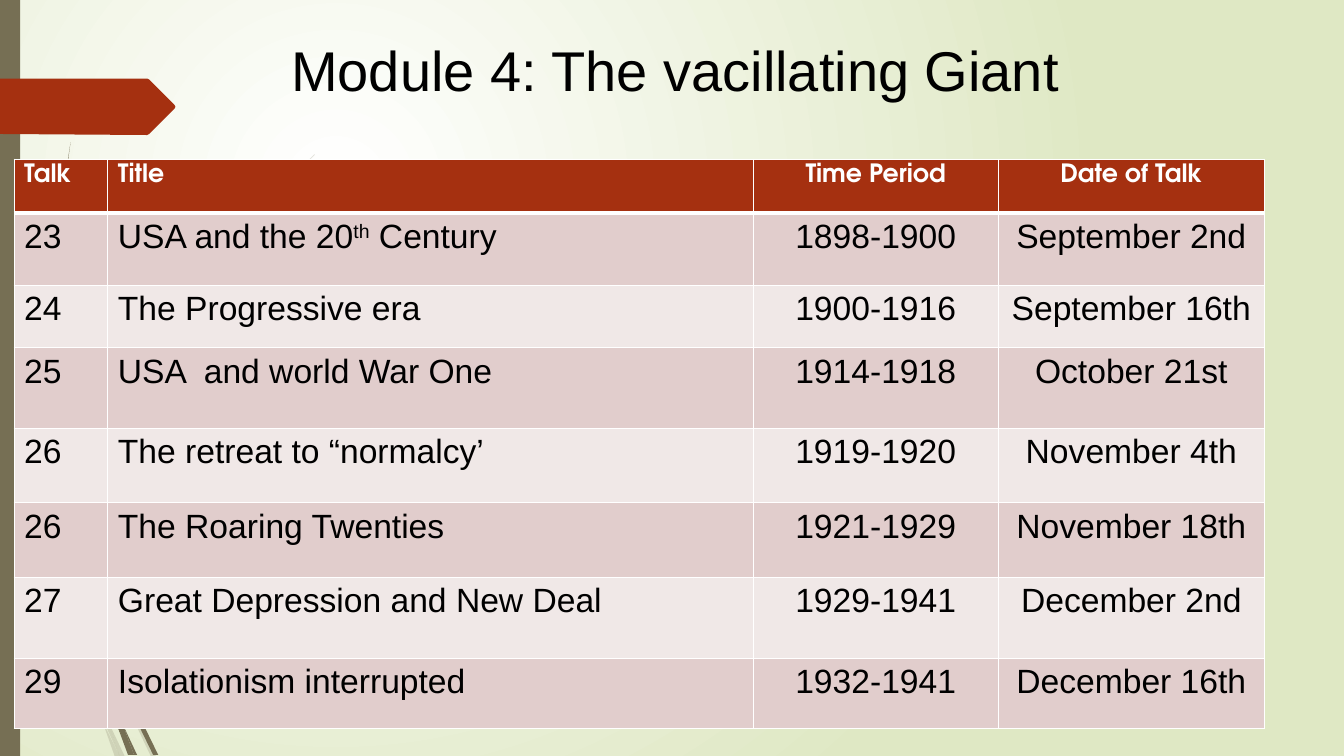
from dataclasses import dataclass

from lxml.etree import SubElement
from pptx import Presentation
from pptx.dml.color import RGBColor
from pptx.enum.shapes import MSO_SHAPE
from pptx.enum.text import PP_ALIGN
from pptx.oxml.ns import qn
from pptx.util import Inches, Pt

WHITE = RGBColor(0xFF, 0xFF, 0xFF)
BLACK = RGBColor(0x00, 0x00, 0x00)
PALE_GREEN = RGBColor(0xDF, 0xE8, 0xC4)
OLIVE = RGBColor(0x76, 0x6F, 0x54)
RUST = RGBColor(0xA5, 0x30, 0x10)
ROSE = RGBColor(0xE1, 0xCD, 0xCC)
PALE_ROSE = RGBColor(0xF0, 0xE8, 0xE7)

BODY_FONT = "Arial"
HEADER_FONT = "TeX Gyre Adventor"
SUPERSCRIPT_MARK = "^"

COLUMN_WIDTHS = (0.93, 6.4, 2.43, 2.64)
ROW_HEIGHTS = (0.53, 0.72, 0.62, 0.8, 0.74, 0.74, 0.8, 0.7)


@dataclass
class Outline:
    points: list[tuple[float, float]]
    color: RGBColor = OLIVE
    opacity: int = 100


@dataclass
class Talk:
    number: str
    title: str
    period: str
    date: str


HEADER = Talk("Talk", "Title", "Time Period", "Date of Talk")
TALKS = [
    Talk("23", "USA and the 20^th^ Century", "1898-1900", "September 2nd"),
    Talk("24", "The Progressive era", "1900-1916", "September 16th"),
    Talk("25", "USA  and world War One", "1914-1918", "October 21st"),
    Talk("26", "The retreat to “normalcy’", "1919-1920", "November 4th"),
    Talk("26", "The Roaring Twenties", "1921-1929", "November 18th"),
    Talk("27", "Great Depression and New Deal", "1929-1941", "December 2nd"),
    Talk("29", "Isolationism interrupted", "1932-1941", "December 16th"),
]

GRASS = [
    # Faded blades
    Outline([(0.92, 6.07), (0.88, 5.96), (0.88, 6.1), (1.23, 6.94), (1.5, 7.51),
             (1.55, 7.51), (1.27, 6.92)], opacity=20),
    Outline([(1.19, 7.51), (1.24, 7.51), (1.05, 7.11)], opacity=20),
    Outline([(0.88, 5.84), (1.1, 4.62), (1.6, 3.49), (2.29, 2.45), (2.68, 1.98),
             (3.12, 1.54), (3.12, 1.53), (2.68, 1.97), (2.28, 2.44), (1.58, 3.48),
             (1.07, 4.61), (0.85, 5.84), (0.88, 5.96)], opacity=20),
    Outline([(1.01, 7.14), (1.14, 7.51), (1.19, 7.51)], opacity=20),
    Outline([(0.96, 6.92), (0.93, 6.83), (0.99, 7.07), (1.19, 7.51), (1.05, 7.11)],
            opacity=20),
    # Solid blades
    Outline([(1.13, 6.49), (1.1, 6.41), (1.11, 6.56), (1.32, 7.08), (1.52, 7.49),
             (1.57, 7.49), (1.36, 7.06)]),
    Outline([(0.6, 4.72), (0.54, 3.49), (0.58, 2.45), (0.63, 1.93), (0.7, 1.41),
             (0.62, 1.93), (0.56, 2.45), (0.52, 3.49), (0.55, 4.49)]),
    Outline([(1.33, 7.49), (1.36, 7.49), (1.22, 7.19)]),
    Outline([(1.17, 7.22), (1.27, 7.49), (1.31, 7.49)]),
    Outline([(1.16, 7.06), (1.1, 6.91), (1.17, 7.22), (1.3, 7.49), (1.33, 7.49),
             (1.22, 7.19)]),
]
ARROW = Outline([(0, 0.78), (1.46, 0.78), (1.48, 0.79), (1.73, 1.04), (1.74, 1.06),
                 (1.73, 1.08), (1.48, 1.33), (1.46, 1.34), (0, 1.33)], RUST)


def paint_background(s) -> None:
    fill = s.background.fill
    fill.gradient()
    for stop, color in zip(fill.gradient_stops, (WHITE, PALE_GREEN)):
        stop.color.rgb = color
    grad = s._element.find(".//" + qn("a:gradFill"))
    grad.remove(grad.find(qn("a:lin")))
    circle = SubElement(grad, qn("a:path"), path="circle")
    SubElement(circle, qn("a:fillToRect"), l="50000", t="50000", r="100000", b="100000")


def paint_shape(sp, color: RGBColor, opacity: int = 100) -> None:
    sp.shadow.inherit = False
    sp.fill.solid()
    sp.fill.fore_color.rgb = color
    sp.line.fill.background()
    if opacity < 100:
        srgb = sp._element.spPr.find(".//" + qn("a:srgbClr"))
        SubElement(srgb, qn("a:alpha"), val=str(opacity * 1000))


def draw_outline(s, outline: Outline) -> None:
    first, *rest = [(Inches(x), Inches(y)) for x, y in outline.points]
    builder = s.shapes.build_freeform(*first)
    builder.add_line_segments(rest, close=True)
    paint_shape(builder.convert_to_shape(), outline.color, outline.opacity)


def style_run(r, font: str, size: int, color: RGBColor, bold: bool = False) -> None:
    r.font.name = font
    r.font.size = Pt(size)
    r.font.bold = bold
    r.font.color.rgb = color


def set_borders(cell, top: int, bottom: int) -> None:
    tc_pr = cell._tc.get_or_add_tcPr()
    for side, width in (("L", 1), ("R", 1), ("T", top), ("B", bottom)):
        ln = SubElement(tc_pr, qn(f"a:ln{side}"), w=str(Pt(width)))
        fill = SubElement(ln, qn("a:solidFill"))
        SubElement(fill, qn("a:srgbClr"), val=str(WHITE))


def fill_cell(cell, text: str, row: int, col: int) -> None:
    header = row == 0
    set_borders(cell, top=3 if row == 1 else 1, bottom=3 if header else 1)
    cell.fill.solid()
    cell.fill.fore_color.rgb = RUST if header else ROSE if row % 2 else PALE_ROSE
    p = cell.text_frame.paragraphs[0]
    if col >= 2:
        p.alignment = PP_ALIGN.CENTER
    for i, part in enumerate(text.split(SUPERSCRIPT_MARK)):
        r = p.add_run()
        r.text = part
        if header:
            style_run(r, HEADER_FONT, 18, WHITE, bold=True)
        else:
            style_run(r, BODY_FONT, 24, BLACK)
        if i % 2:
            r._r.get_or_add_rPr().set("baseline", "30000")


def draw_title(s, text: str) -> None:
    tf = s.shapes.add_textbox(Inches(2.79), Inches(0.3), Inches(7.89), Inches(0.77)).text_frame
    tf.word_wrap = False
    tf.text = text
    style_run(tf.paragraphs[0].runs[0], BODY_FONT, 40, BLACK)


def draw_schedule(s) -> None:
    table = s.shapes.add_table(
        len(ROW_HEIGHTS), len(COLUMN_WIDTHS), Inches(0.14), Inches(1.58),
        Inches(sum(COLUMN_WIDTHS)), Inches(sum(ROW_HEIGHTS))).table
    for column, width in zip(table.columns, COLUMN_WIDTHS):
        column.width = Inches(width)
    for row, height in zip(table.rows, ROW_HEIGHTS):
        row.height = Inches(height)
    for i, talk in enumerate([HEADER, *TALKS]):
        for j, text in enumerate((talk.number, talk.title, talk.period, talk.date)):
            fill_cell(table.cell(i, j), text, i, j)


def main() -> None:
    prs = Presentation()
    prs.slide_width, prs.slide_height = Inches(13.33), Inches(7.5)
    s = prs.slides.add_slide(prs.slide_layouts[6])

    # Backdrop
    paint_background(s)
    for blade in GRASS:
        draw_outline(s, blade)
    bar = s.shapes.add_shape(MSO_SHAPE.RECTANGLE, 0, 0, Inches(0.2), Inches(7.5))
    paint_shape(bar, OLIVE)
    draw_outline(s, ARROW)

    # Content
    draw_title(s, "Module 4: The vacillating Giant")
    draw_schedule(s)

    prs.save("out.pptx")


if __name__ == "__main__":
    main()
